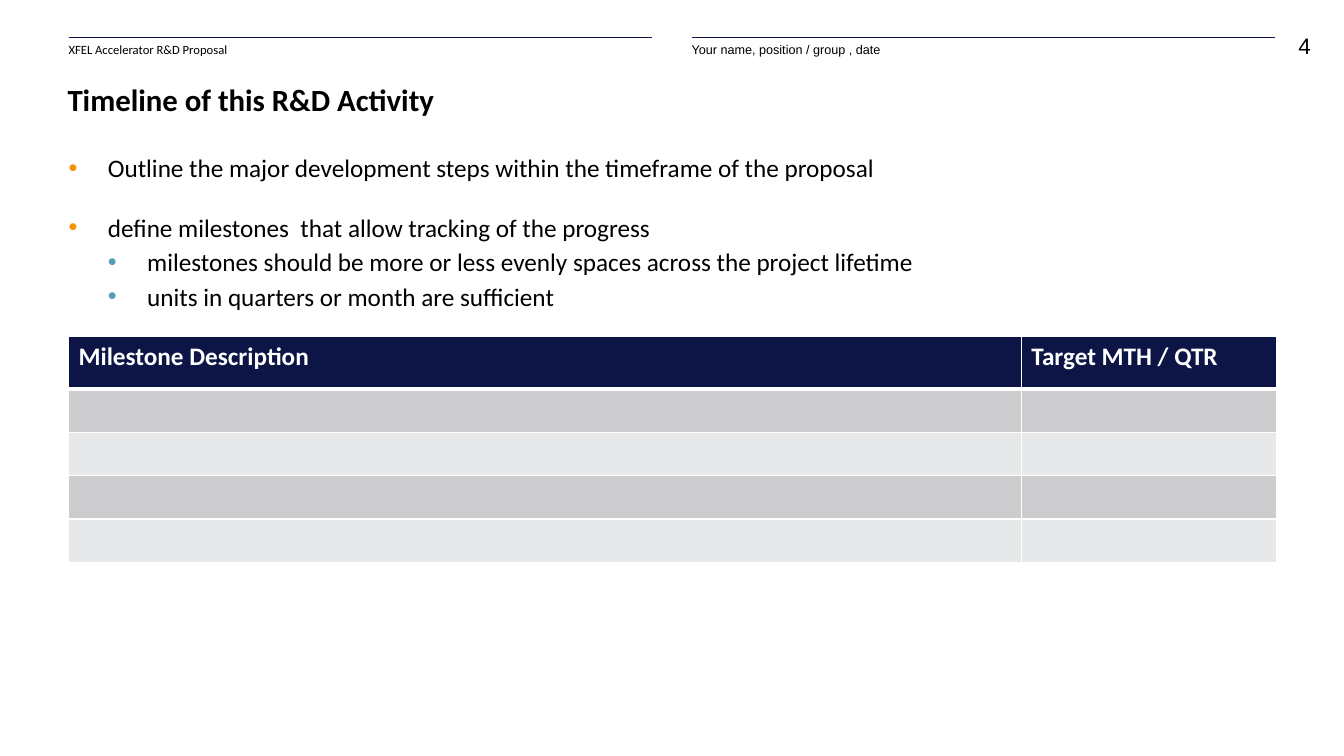
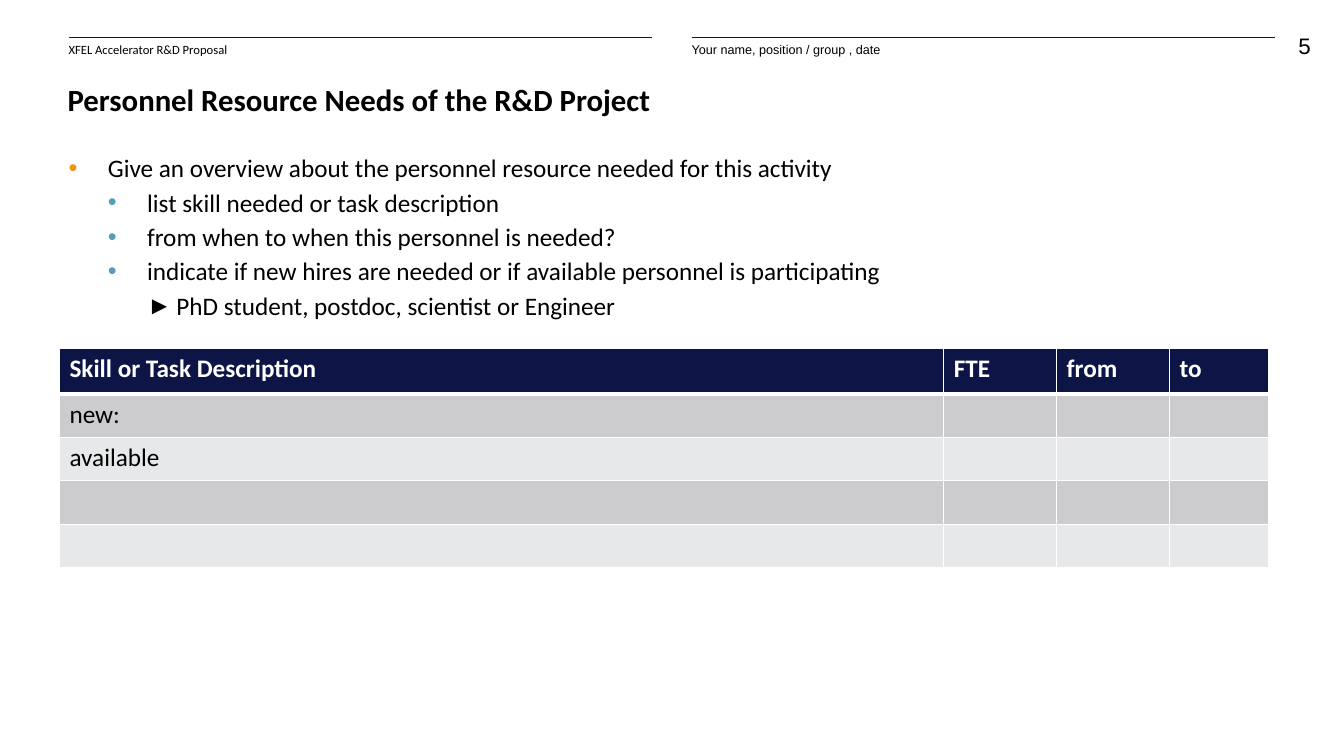
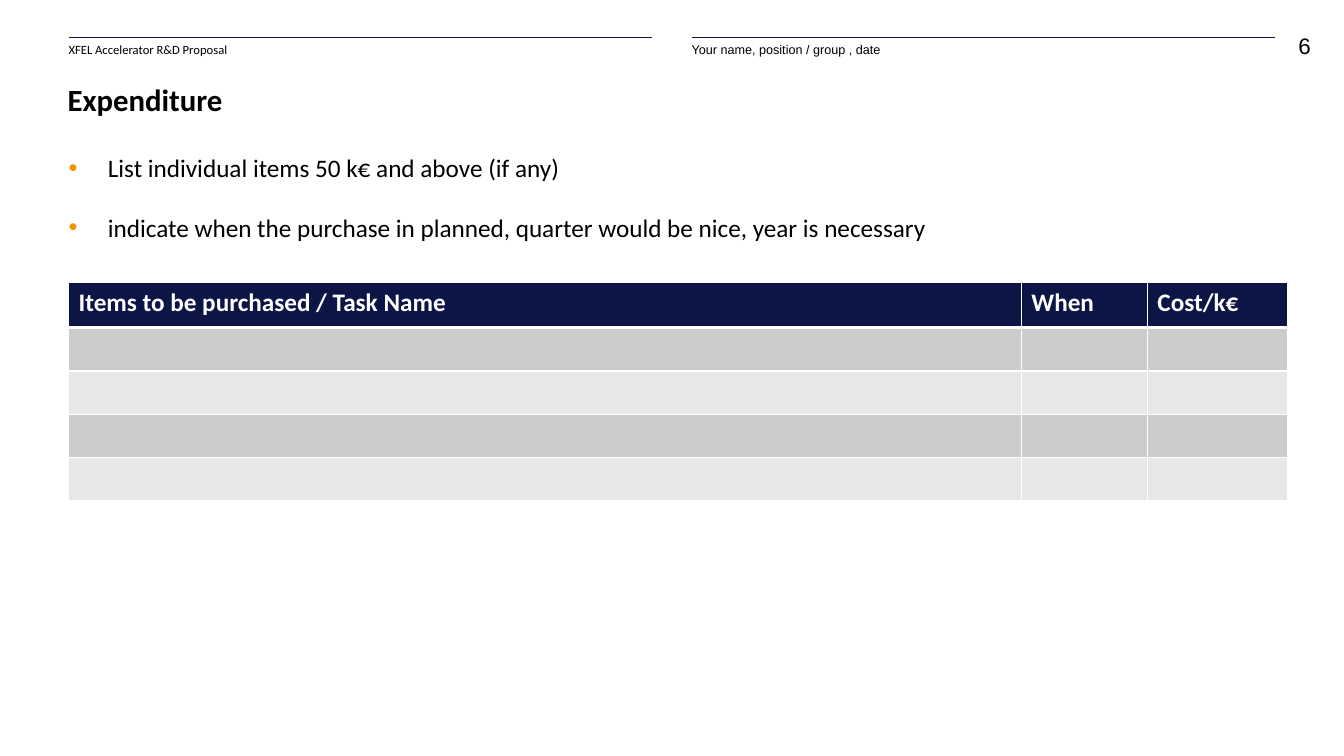
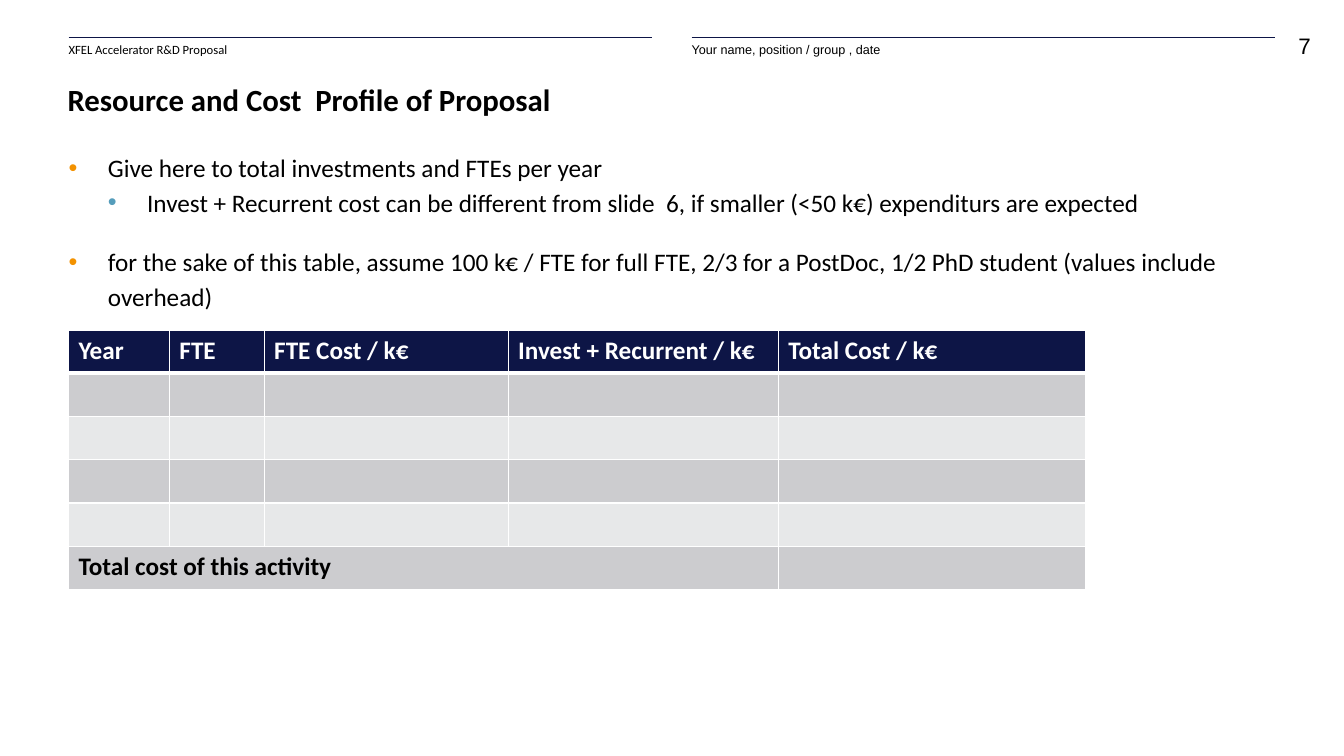
"""Build the four planning slides of an accelerator R&D proposal."""
from lxml import etree
from pptx import Presentation
from pptx.dml.color import RGBColor
from pptx.enum.shapes import MSO_CONNECTOR
from pptx.enum.text import MSO_ANCHOR, MSO_AUTO_SIZE, PP_ALIGN
from pptx.oxml.ns import qn
from pptx.util import Pt

PX = 9144
STRAIGHT = MSO_CONNECTOR.STRAIGHT
LEFT, RIGHT = PP_ALIGN.LEFT, PP_ALIGN.RIGHT
TOP, BOTTOM = MSO_ANCHOR.TOP, MSO_ANCHOR.BOTTOM
NO_AUTOFIT = MSO_AUTO_SIZE.NONE

COLORS = {
    "navy": "0D1546",
    "orange": "F39200",
    "blue": "559DBB",
    "dark_band": "CCCCCF",
    "light_band": "E7E8E9",
    "black": "000000",
    "white": "FFFFFF",
}
BULLETS = [
    {"margin": 39, "hang": 39, "char": "•", "color": "orange", "before": 18},
    {"margin": 78, "hang": 39, "char": "•", "color": "blue", "before": 0},
    {"margin": 107, "hang": 29, "char": "►", "color": "black", "before": 0},
]
HEADERS = [
    (68, "XFEL Accelerator R&D Proposal", "Calibri"),
    (686, "Your name, position / group , date", "Arial"),
]
HEADER_WIDTH = 579
FIRST_NUMBER = 4
PAGES = [
    {
        "title": "Timeline of this R&D Activity",
        "body_height": 495,
        "points": [
            (0, "Outline the major development steps within the timeframe of the proposal"),
            (0, "define milestones  that allow tracking of the progress"),
            (1, "milestones should be more or less evenly spaces across the project lifetime"),
            (1, "units in quarters or month are sufficient"),
        ],
        "table_at": (68, 334),
        "columns": [945, 253],
        "head_height": 52,
        "rows": [["Milestone Description", "Target MTH / QTR"], [], [], [], []],
    },
    {
        "title": "Personnel Resource Needs of the R&D Project",
        "body_height": 137,
        "points": [
            (0, "Give an overview about the personnel resource needed for this activity"),
            (1, "list skill needed or task description"),
            (1, "from when to when this personnel is needed?"),
            (1, "indicate if new hires are needed or if available personnel is participating"),
            (2, "PhD student, postdoc, scientist or Engineer"),
        ],
        "table_at": (59, 346),
        "columns": [877, 112, 112, 98],
        "head_height": 45,
        "rows": [["Skill or Task Description", "FTE", "from", "to"], ["new:"], ["available"], [], []],
    },
    {
        "title": "Expenditure",
        "body_height": 104,
        "points": [
            (0, "List individual items 50 k€ and above (if any)"),
            (0, "indicate when the purchase in planned, quarter would be nice, year is necessary"),
        ],
        "table_at": (68, 280),
        "columns": [945, 125, 139],
        "head_height": 45,
        "rows": [["Items to be purchased / Task Name", "When", "Cost/k€"], [], [], [], []],
    },
    {
        "title": "Resource and Cost  Profile of Proposal",
        "body_height": 104,
        "points": [
            (0, "Give here to total investments and FTEs per year"),
            (1, "Invest + Recurrent cost can be different from slide  6, if smaller (<50 k€) expenditurs are expected"),
            (0, "for the sake of this table, assume 100 k€ / FTE for full FTE, 2/3 for a PostDoc, 1/2 PhD student (values include overhead)"),
        ],
        "table_at": (68, 328),
        "columns": [100, 94, 242, 268, 305],
        "head_height": 42,
        "rows": [
            ["Year", "FTE", "FTE Cost / k€", "Invest + Recurrent / k€", "Total Cost / k€"],
            [], [], [], [], ["Total cost of this activity"],
        ],
        "total_span": 4,
    },
]
ROW_HEIGHT = 43


def add_span(para, text, size, font="Calibri", color="black", bold=False):
    span = para.add_run()
    span.text = text
    span.font.size = Pt(size)
    span.font.name = font
    span.font.bold = bold
    span.font.color.rgb = RGBColor.from_string(COLORS[color])


def set_frame(box, left, top, width, height, anchor=TOP):
    box.left, box.top, box.width, box.height = (n * PX for n in (left, top, width, height))
    frame = box.text_frame
    frame.margin_left = frame.margin_top = frame.margin_right = frame.margin_bottom = 0
    frame.word_wrap = True
    frame.auto_size = NO_AUTOFIT
    frame.vertical_anchor = anchor
    return frame


deck = Presentation()
deck.slide_width, deck.slide_height = 1333 * PX, 750 * PX
layout = deck.slide_layouts[1]

for number, content in enumerate(PAGES, FIRST_NUMBER):
    page = deck.slides.add_slide(layout)

    number_box = page.shapes.add_textbox(0, 0, 0, 0)
    para = set_frame(number_box, 1244, 32, 56, 32).paragraphs[0]
    para.alignment = RIGHT
    add_span(para, str(number), 16, "Arial")

    for left, label, font in HEADERS:
        rule = page.shapes.add_connector(STRAIGHT, left * PX, 37 * PX, (left + HEADER_WIDTH) * PX, 37 * PX)
        rule.line.color.rgb = RGBColor.from_string(COLORS["navy"])
        rule.line.width = Pt(0.5)
        etree.SubElement(rule.element.spPr, qn("a:effectLst"))
        header_box = page.shapes.add_textbox(0, 0, 0, 0)
        add_span(set_frame(header_box, left, 42, HEADER_WIDTH, 24).paragraphs[0], label, 9, font)

    para = set_frame(page.shapes.title, 67, 78, 1198, 39, BOTTOM).paragraphs[0]
    para.alignment = LEFT
    add_span(para, content["title"], 22, bold=True)

    body = set_frame(page.placeholders[1], 68, 147, 1197, content["body_height"])
    for index, (level, text) in enumerate(content["points"]):
        para = body.add_paragraph() if index else body.paragraphs[0]
        bullet = BULLETS[level]
        para.level = level
        properties = para._p.get_or_add_pPr()
        properties.set("marL", str(bullet["margin"] * PX))
        properties.set("indent", str(-bullet["hang"] * PX))
        bullet_color = etree.SubElement(properties, qn("a:buClr"))
        etree.SubElement(bullet_color, qn("a:srgbClr"), val=COLORS[bullet["color"]])
        etree.SubElement(properties, qn("a:buChar"), char=bullet["char"])
        para.line_spacing = 1.14
        para.space_before = Pt(bullet["before"] if index else 0)
        add_span(para, text, 18)

    rows, columns = content["rows"], content["columns"]
    heights = [content["head_height"]] + [ROW_HEIGHT] * (len(rows) - 1)
    left, top = content["table_at"]
    table = page.shapes.add_table(
        len(rows), len(columns), left * PX, top * PX, sum(columns) * PX, sum(heights) * PX
    ).table
    table.horz_banding = False
    for column, width in zip(table.columns, columns):
        column.width = width * PX
    for row_index, (texts, height) in enumerate(zip(rows, heights)):
        table.rows[row_index].height = height * PX
        is_head = row_index == 0
        is_total = "total_span" in content and row_index == len(rows) - 1
        band = "navy" if is_head else "dark_band" if row_index % 2 else "light_band"
        for column_index in range(len(columns)):
            cell = table.cell(row_index, column_index)
            properties = cell._tc.get_or_add_tcPr()
            for side in "LRTB":
                thick = (is_head and side == "B") or (row_index == 1 and side == "T")
                border = etree.SubElement(properties, qn(f"a:ln{side}"), w=str(Pt(3 if thick else 1)))
                border_fill = etree.SubElement(border, qn("a:solidFill"))
                etree.SubElement(border_fill, qn("a:srgbClr"), val=COLORS["white"])
            cell.fill.solid()
            cell.fill.fore_color.rgb = RGBColor.from_string(COLORS[band])
            if column_index < len(texts):
                add_span(
                    cell.text_frame.paragraphs[0], texts[column_index], 18,
                    color="white" if is_head else "black", bold=is_head or is_total,
                )
        if is_total:
            table.cell(row_index, 0).merge(table.cell(row_index, content["total_span"] - 1))

deck.save("out.pptx")
